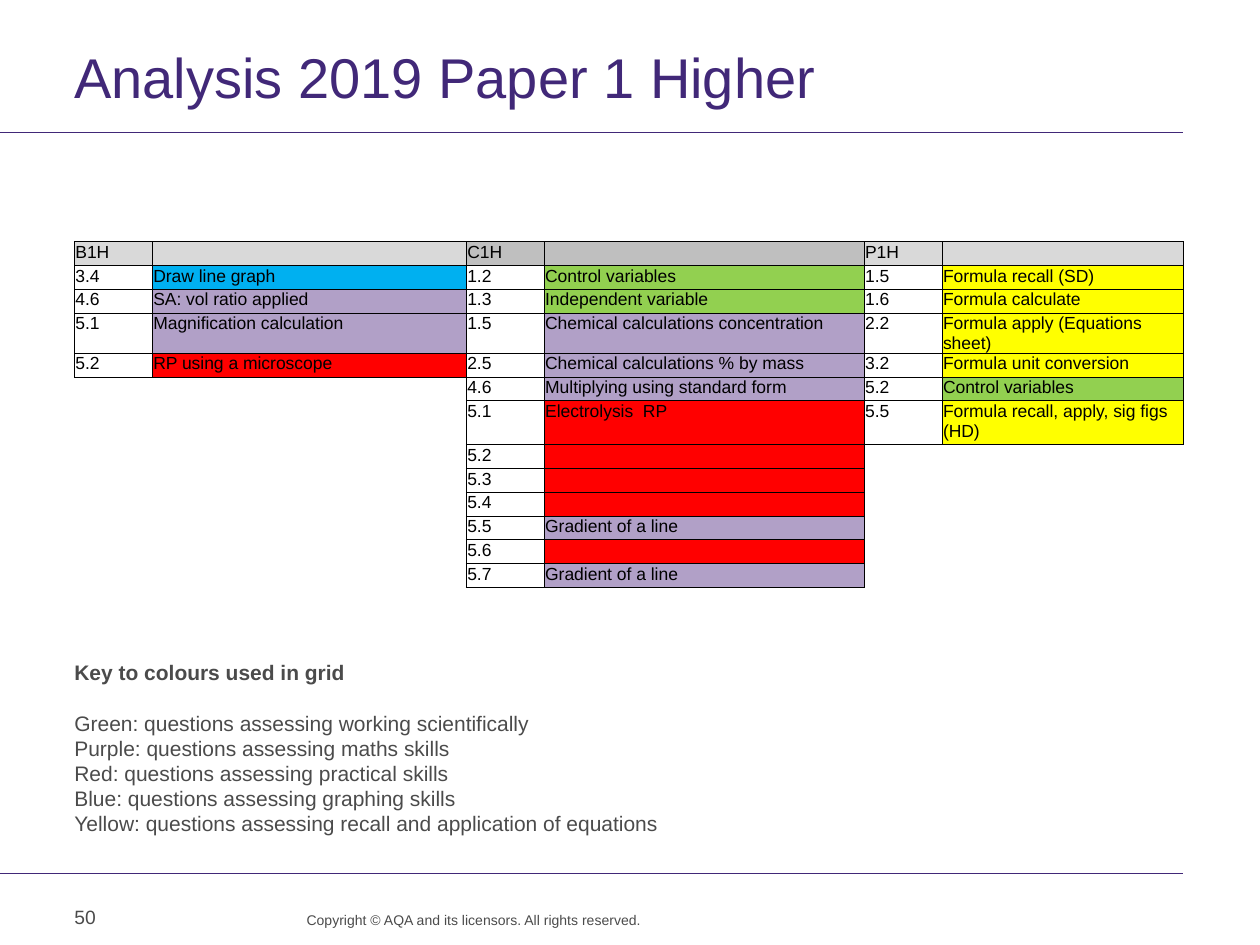
"""Builds the slide with the 2019 Paper 1 Higher question grid and its colour key."""
from dataclasses import dataclass

from lxml import etree
from pptx import Presentation
from pptx import util as u
from pptx.dml.color import RGBColor
from pptx.enum import shapes, text
from pptx.oxml import ns


@dataclass(frozen=True)
class Theme:
    font: str = "Arial"
    brand: str = "412878"
    body: str = "4B4B4B"
    ink: str = "000000"
    white: str = "FFFFFF"
    pale: str = "D9D9D9"
    grey: str = "BFBFBF"
    green: str = "92D050"
    purple: str = "B1A0C7"
    red: str = "FF0000"
    blue: str = "00B0F0"
    yellow: str = "FFFF00"
    title: int = 32
    key: int = 12
    page: int = 11
    grid: int = 10
    small: int = 8


T = Theme()


def style(para, size, color, bold=False):
    font = para.font
    font.name, font.size, font.bold = T.font, u.Pt(size), bold
    font.color.rgb = RGBColor.from_string(color)


def label(slide, box, lines, size):
    frame = slide.shapes.add_textbox(*map(u.Cm, box)).text_frame
    frame.word_wrap = True
    frame.margin_left = frame.margin_right = frame.margin_top = frame.margin_bottom = 0
    frame.text = "\n".join(lines)
    for para in frame.paragraphs:
        style(para, size, T.body)
    return frame


deck = Presentation()
deck.slide_width, deck.slide_height = u.Cm(25.4), u.Cm(19.05)
slide = deck.slides.add_slide(deck.slide_layouts[5])

for y in (2.67, 17.6):
    rule = slide.shapes.add_connector(
        shapes.MSO_CONNECTOR.STRAIGHT, 0, u.Cm(y), u.Cm(23.85), u.Cm(y))
    rule.line.color.rgb = RGBColor.from_string(T.brand)
    rule.line.width = u.Pt(0.6)
    etree.SubElement(rule.element.spPr, ns.qn("a:effectLst"))

title = slide.shapes.title
title.left, title.top, title.width, title.height = map(u.Cm, (1.5, 1.22, 22.35, 1.19))
frame = title.text_frame
frame.text = "Analysis 2019 Paper 1 Higher"
frame.auto_size = text.MSO_AUTO_SIZE.NONE
frame.vertical_anchor = text.MSO_ANCHOR.TOP
frame.margin_left = frame.margin_top = frame.margin_bottom = 0
para = frame.paragraphs[0]
para.alignment = text.PP_ALIGN.LEFT
para.line_spacing = u.Pt(28)
style(para, T.title, T.brand)

papers = [
    [("B1H", "", T.pale),
     ("3.4", "Draw line graph", T.blue),
     ("4.6", "SA: vol ratio applied", T.purple),
     ("5.1", "Magnification calculation", T.purple),
     ("5.2", "RP using a microscope", T.red)],
    [("C1H", "", T.grey),
     ("1.2", "Control variables", T.green),
     ("1.3", "Independent variable", T.green),
     ("1.5", "Chemical calculations concentration", T.purple),
     ("2.5", "Chemical calculations % by mass", T.purple),
     ("4.6", "Multiplying using standard form", T.purple),
     ("5.1", "Electrolysis  RP", T.red),
     ("5.2", "", T.red),
     ("5.3", "", T.red),
     ("5.4", "", T.red),
     ("5.5", "Gradient of a line", T.purple),
     ("5.6", "", T.red),
     ("5.7", "Gradient of a line", T.purple)],
    [("P1H", "", T.pale),
     ("1.5", "Formula recall (SD)", T.yellow),
     ("1.6", "Formula calculate", T.yellow),
     ("2.2", "Formula apply (Equations sheet)", T.yellow),
     ("3.2", "Formula unit conversion", T.yellow),
     ("5.2", "Control variables", T.green),
     ("5.5", "Formula recall, apply, sig figs (HD)", T.yellow)],
]
widths = (1.57, 6.33, 1.57, 6.45, 1.57, 4.86)
heights = [0.48] * 13
heights[3], heights[6] = 0.81, 0.88

holder = slide.shapes.add_table(
    len(heights), len(widths), u.Cm(1.5), u.Cm(4.87),
    u.Cm(sum(widths)), u.Cm(sum(heights)))
holder.element.xpath(".//a:tableStyleId")[0].text = "{2D5ABB26-0587-4C30-8999-92F81FD0307C}"
grid = holder.table
grid.first_row = grid.horz_banding = False
for col, width in zip(grid.columns, widths):
    col.width = u.Cm(width)
for row, height in zip(grid.rows, heights):
    row.height = u.Cm(height)

for cell in grid.iter_cells():
    cell.margin_left = cell.margin_right = cell.margin_top = u.Cm(0.02)
    cell.margin_bottom = 0
    style(cell.text_frame.paragraphs[0], T.grid, T.ink)

for n, paper in enumerate(papers):
    for r, (code, topic, color) in enumerate(paper):
        fills = (color if r == 0 else T.white, color)
        for c, (words, fill) in enumerate(zip((code, topic), fills)):
            cell = grid.cell(r, 2 * n + c)
            cell.text_frame.paragraphs[0].text = words
            props = cell._tc.get_or_add_tcPr()
            for side in ("lnL", "lnR", "lnT", "lnB"):
                edge = etree.SubElement(props, ns.qn("a:" + side), w=str(u.Pt(0.5)))
                solid = etree.SubElement(edge, ns.qn("a:solidFill"))
                etree.SubElement(solid, ns.qn("a:srgbClr"), val=T.ink)
            cell.fill.solid()
            cell.fill.fore_color.rgb = RGBColor.from_string(fill)

key = label(slide, (1.5, 13.31, 13.06, 3.58), [
    "Key to colours used in grid",
    "Green: questions assessing working scientifically",
    "Purple: questions assessing maths skills",
    "Red: questions assessing practical skills",
    "Blue: questions assessing graphing skills",
    "Yellow: questions assessing recall and application of equations",
], T.key)
for para in key.paragraphs:
    para.line_spacing = u.Pt(14.3)
head = key.paragraphs[0]
head.font.bold = True
head.space_after = u.Pt(14.5)

note = label(slide, (5.49, 18.36, 7.44, 0.66),
             ["Copyright © AQA and its licensors. All rights reserved."], T.small)
note.paragraphs[0].alignment = text.PP_ALIGN.RIGHT
note.paragraphs[0].line_spacing = u.Pt(10)

page = label(slide, (1.5, 17.98, 1.67, 1.02), ["50"], T.page)
page.vertical_anchor = text.MSO_ANCHOR.MIDDLE

deck.save("out.pptx")
